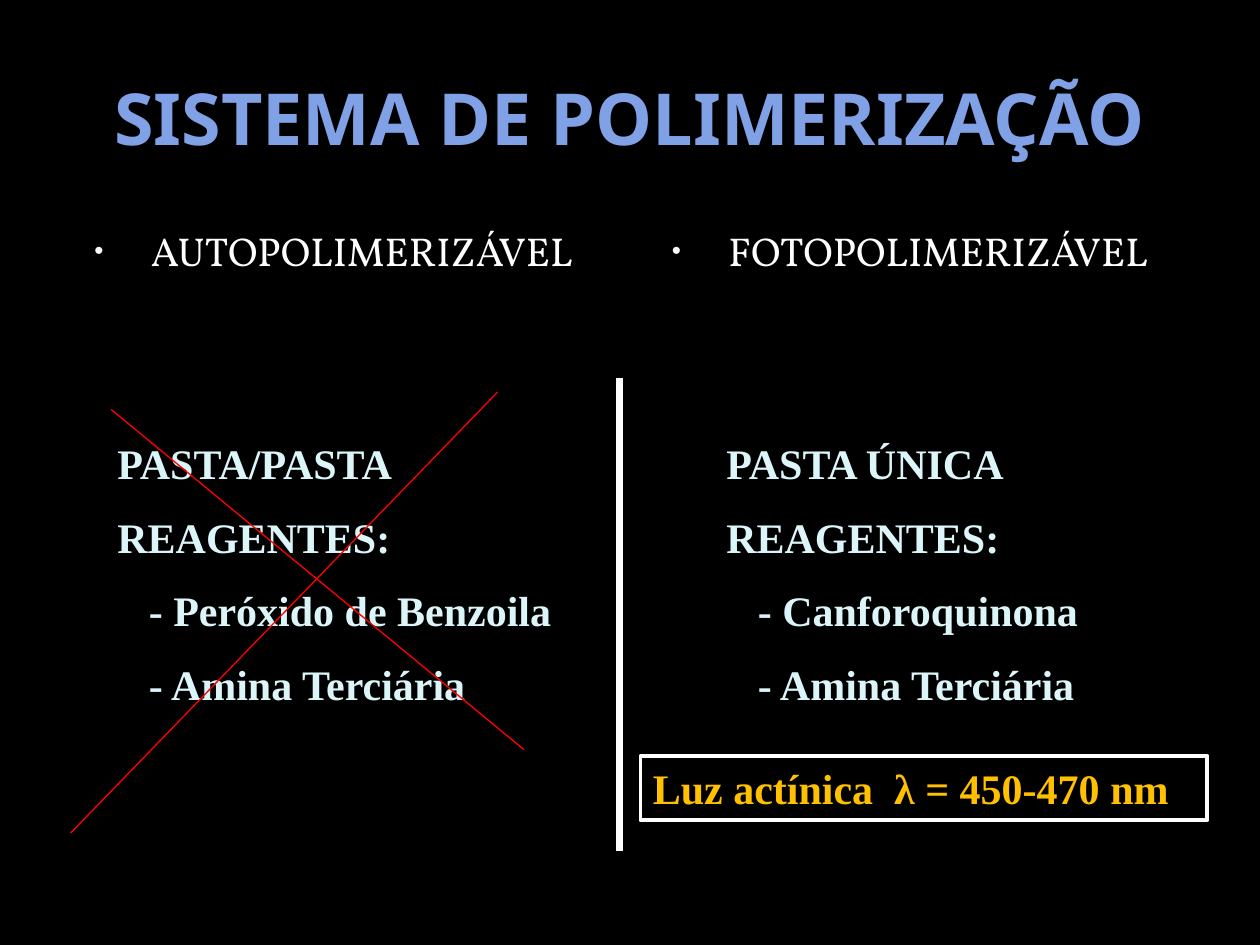
import pptx
import pptx.util
import pptx.dml.color
import pptx.enum.shapes
import pptx.enum.text
import pptx.oxml
import pptx.oxml.ns

Pt = pptx.util.Pt
NS = pptx.oxml.ns.nsdecls("a")


def paint(hue):
    return pptx.dml.color.RGBColor.from_string(hue)


def write(para, text, face, size, hue, bold=True):
    run = para.add_run()
    run.text = text
    run.font.name = face
    run.font.size = Pt(size)
    run.font.bold = bold
    run.font.color.rgb = paint(hue)


deck = pptx.Presentation()
deck.slide_width, deck.slide_height = Pt(720), Pt(540)
slide = deck.slides.add_slide(deck.slide_layouts[5])
slide.background.fill.solid()
slide.background.fill.fore_color.rgb = paint("000000")
shapes = slide.shapes

title = shapes.title
title.left, title.top, title.width, title.height = Pt(36), Pt(21.6), Pt(648), Pt(90)
title.text_frame.vertical_anchor = pptx.enum.text.MSO_ANCHOR.MIDDLE
para = title.text_frame.paragraphs[0]
para.alignment = pptx.enum.text.PP_ALIGN.CENTER
write(para, "SISTEMA DE POLIMERIZAÇÃO", "Noto Sans", 41, "81A1E7")

bullet = [
    '<a:buClr %s><a:srgbClr val="F9F9F9"/></a:buClr>',
    '<a:buSzPct %s val="65000"/>',
    '<a:buFont %s typeface="Arial"/>',
    '<a:buChar %s char="•"/>',
]
for left, head in [(36, "AUTOPOLIMERIZÁVEL"), (366, "FOTOPOLIMERIZÁVEL")]:
    box = shapes.add_textbox(Pt(left), Pt(126), Pt(318), Pt(356.4))
    box.text_frame.word_wrap = True
    para = box.text_frame.paragraphs[0]
    props = para._p.get_or_add_pPr()
    props.set("marL", str(Pt(43.2)))
    props.set("indent", str(Pt(-32.4)))
    for part in bullet:
        props.append(pptx.oxml.parse_xml(part % NS))
    write(para, head, "Vollkorn", 23, "FFFFFF", False)

lists = [
    (60, 282, ["PASTA/PASTA", "REAGENTES:", "- Peróxido de Benzoila", "- Amina Terciária"]),
    (408, 252, ["PASTA ÚNICA", "REAGENTES:", "- Canforoquinona", "- Amina Terciária"]),
]
for left, width, items in lists:
    box = shapes.add_textbox(Pt(left), Pt(246.4), Pt(width), Pt(165.6))
    frame = box.text_frame
    frame.word_wrap = True
    for row, item in enumerate(items):
        para = frame.add_paragraph() if row else frame.paragraphs[0]
        if item.startswith("-"):
            para._p.get_or_add_pPr().set("marL", str(Pt(18)))
        if row:
            para.space_before = Pt(13.3)
        write(para, item, "Times New Roman", 24, "DBF5F9")

light = shapes.add_shape(
    pptx.enum.shapes.MSO_SHAPE.RECTANGLE, Pt(366), Pt(432), Pt(324), Pt(36.7)
)
light.shadow.inherit = False
light.fill.background()
light.line.color.rgb = paint("FFFFFF")
light.line.width = Pt(2.25)
light.text_frame.word_wrap = True
para = light.text_frame.paragraphs[0]
para.alignment = pptx.enum.text.PP_ALIGN.LEFT
write(para, "Luz actínica  λ = 450-470 nm", "Times New Roman", 24, "FFC000")

lines = [
    (354, 216, 354, 486, "FFFFFF", 4.5),
    (63.5, 234, 299.5, 428.4, "FF0000", 0.75),
    (284.4, 224, 40.4, 476, "FF0000", 0.75),
]
for *ends, hue, width in lines:
    line = shapes.add_connector(
        pptx.enum.shapes.MSO_CONNECTOR.STRAIGHT, *[Pt(end) for end in ends]
    )
    line.line.color.rgb = paint(hue)
    line.line.width = Pt(width)
    line._element.spPr.append(pptx.oxml.parse_xml("<a:effectLst %s/>" % NS))

deck.save("out.pptx")
